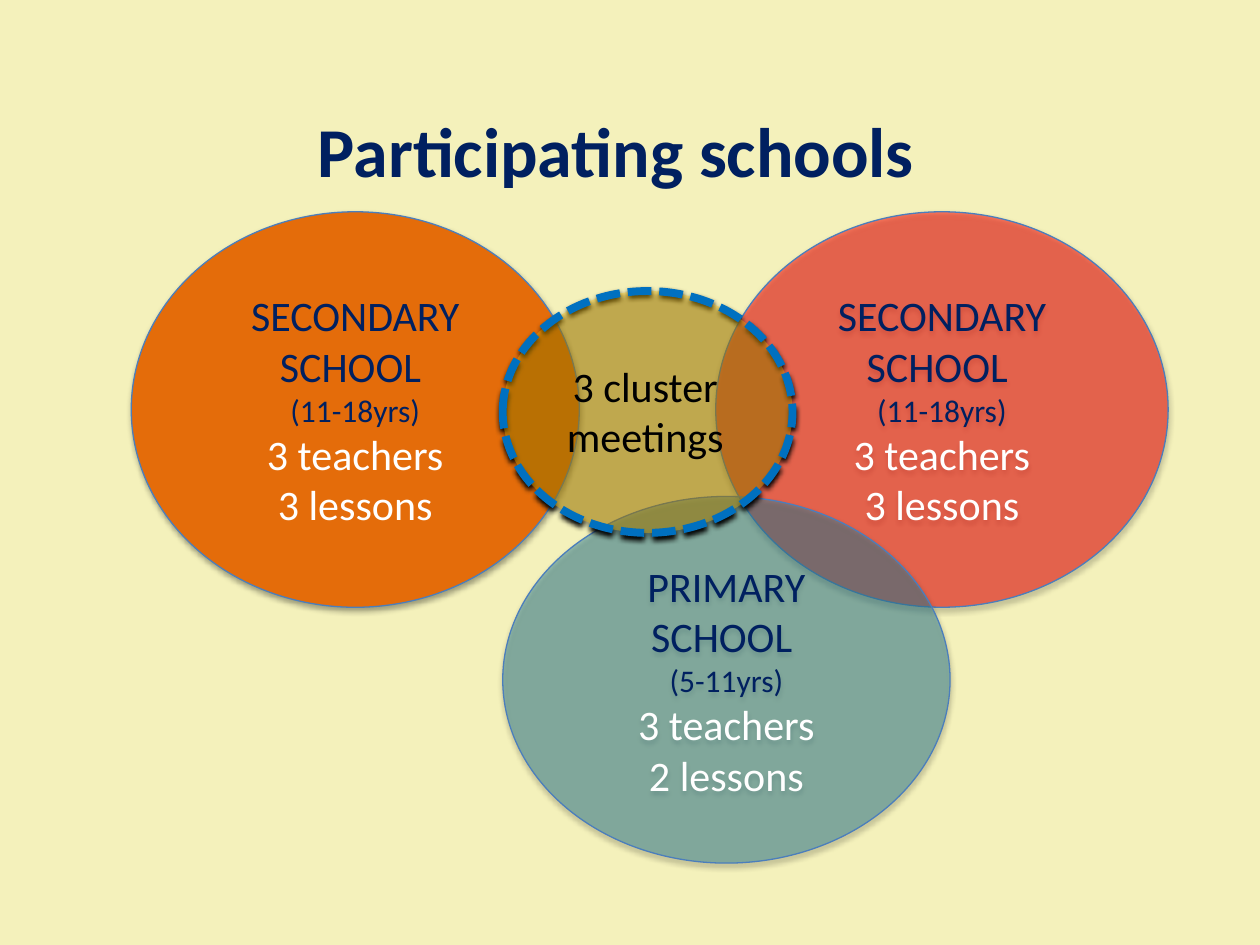
from typing import NamedTuple

from lxml.etree import SubElement
from pptx import Presentation
from pptx.dml.color import RGBColor
from pptx.enum.dml import MSO_LINE_DASH_STYLE as Dash
from pptx.enum.shapes import MSO_SHAPE as Shape
from pptx.enum.text import MSO_ANCHOR as Anchor, MSO_AUTO_SIZE as AutoSize, PP_ALIGN as Align
from pptx.oxml.ns import qn
from pptx.util import Pt

COLORS = {
    "background": "F4F1BB",
    "navy": "002060",
    "white": "FFFFFF",
    "black": "000000",
    "outline": "4B7EBC",
    "orange": "E46C0A",
    "red": "FF0000",
    "teal": "31859C",
    "gold": "FFC000",
    "dash": "0070C0",
}


class Box(NamedTuple):
    left: float
    top: float
    width: float
    height: float

    def lengths(self) -> list:
        return [Pt(value) for value in self]


class School(NamedTuple):
    box: Box
    color: str
    opacity: int
    level: str
    ages: str
    lessons: int


SCHOOLS = [
    School(Box(75, 121, 256, 226), "orange", 100, "SECONDARY", "11-18", 3),
    School(Box(409, 121, 258.5, 226), "red", 50, "SECONDARY", "11-18", 3),
    School(Box(287.3, 283.7, 255.6, 209.5), "teal", 48, "PRIMARY", "5-11", 2),
]


def rgb(name: str) -> RGBColor:
    return RGBColor.from_string(COLORS[name])


def style_paragraph(paragraph, size: float, color: str, bold: bool = False) -> None:
    paragraph.alignment = Align.CENTER
    for run in paragraph.runs:
        run.font.name = "Calibri"
        run.font.size = Pt(size)
        run.font.bold = bold
        run.font.color.rgb = rgb(color)


def add_shadow(shape) -> None:
    shape.shadow.inherit = False
    effects = shape._element.spPr.find(qn("a:effectLst"))
    shadow = SubElement(effects, qn("a:outerShdw"), blurRad=str(Pt(3.15)),
                        dist=str(Pt(1.8)), dir="5400000", rotWithShape="0")
    tint = SubElement(shadow, qn("a:srgbClr"), val=COLORS["black"])
    SubElement(tint, qn("a:alpha"), val="35000")


def add_ellipse(slide, box: Box, color: str, opacity: int, outline: str, weight: float):
    ellipse = slide.shapes.add_shape(Shape.OVAL, *box.lengths())
    ellipse.fill.solid()
    ellipse.fill.fore_color.rgb = rgb(color)
    if opacity < 100:
        tint = ellipse._element.spPr.find(qn("a:solidFill"))[0]
        SubElement(tint, qn("a:alpha"), val=str(opacity * 1000))
    ellipse.line.color.rgb = rgb(outline)
    ellipse.line.width = Pt(weight)
    add_shadow(ellipse)
    return ellipse


def add_school(slide, school: School) -> None:
    ellipse = add_ellipse(slide, school.box, school.color, school.opacity, "outline", 0.75)
    frame = ellipse.text_frame
    frame.vertical_anchor = Anchor.MIDDLE
    frame.text = (f"{school.level} SCHOOL \n({school.ages}yrs)\n"
                  f"3 teachers\n{school.lessons} lessons")
    styles = [(24, "navy"), (18, "navy"), (24, "white"), (24, "white")]
    for paragraph, (size, color) in zip(frame.paragraphs, styles):
        style_paragraph(paragraph, size, color)


def add_title(slide, text: str, box: Box) -> None:
    title = slide.shapes.title
    title.left, title.top, title.width, title.height = box.lengths()
    title.text_frame.text = text
    title.text_frame.vertical_anchor = Anchor.MIDDLE
    style_paragraph(title.text_frame.paragraphs[0], 40, "navy", bold=True)


def add_cluster(slide) -> None:
    cluster = add_ellipse(slide, Box(287.3, 166.3, 165.6, 138.2), "gold", 35, "dash", 4.5)
    cluster.line.dash_style = Dash.SQUARE_DOT
    meetings = slide.shapes.add_textbox(*Box(308.2, 202.3, 121, 65.5).lengths())
    frame = meetings.text_frame
    frame.word_wrap = True
    frame.auto_size = AutoSize.SHAPE_TO_FIT_TEXT
    frame.text = "3 cluster meetings"
    style_paragraph(frame.paragraphs[0], 24, "black")


def main() -> None:
    deck = Presentation()
    deck.slide_width, deck.slide_height = Pt(720), Pt(540)
    slide = deck.slides.add_slide(deck.slide_layouts[5])
    slide.background.fill.solid()
    slide.background.fill.fore_color.rgb = rgb("background")
    add_title(slide, "Participating schools", Box(28, 40.3, 648, 90))
    for school in SCHOOLS:
        add_school(slide, school)
    add_cluster(slide)
    deck.save("out.pptx")


if __name__ == "__main__":
    main()
